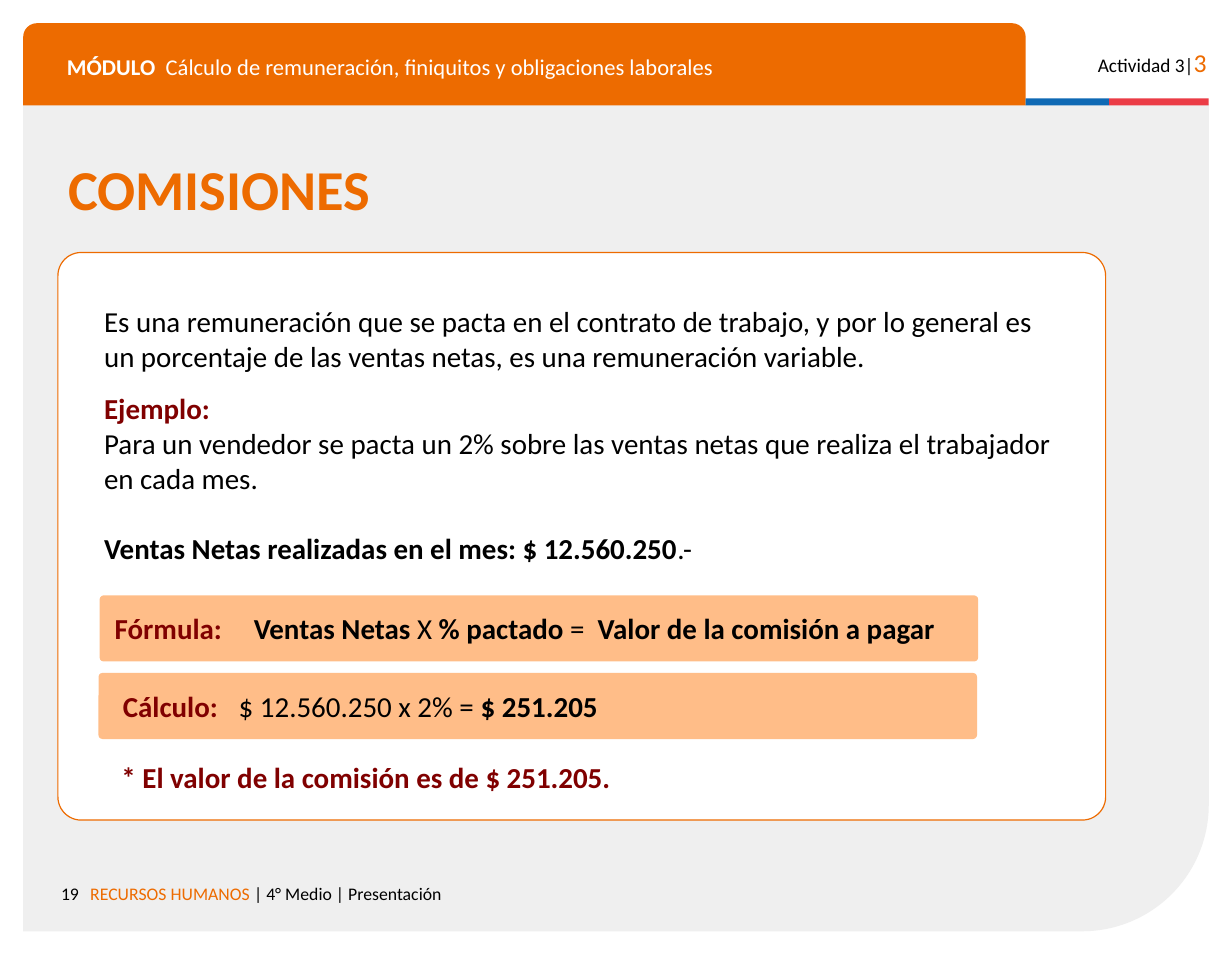
from lxml import etree
from pptx import Presentation
from pptx import util as u
from pptx.dml.color import RGBColor
from pptx.enum import shapes, text
from pptx.oxml.ns import qn

PX = 9144  # 100 px to the inch
FONT = "Calibri"
HEX = {"orange": "ED6B00", "blue": "0F69B4", "red": "EB3C46", "gray": "EFEFEF",
       "peach": "FFB375", "wine": "800000", "black": "000000", "white": "FFFFFF"}
KIND = shapes.MSO_SHAPE
RIGHT = text.PP_ALIGN.RIGHT


def px(*vals):
    return [v * PX for v in vals]


def tint(name):
    return RGBColor.from_string(HEX[name])


def block(page, kind, box, fill, adj=(), line=None):
    part = page.shapes.add_shape(kind, *px(*box))
    part.shadow.inherit = False
    part.fill.solid()
    part.fill.fore_color.rgb = tint(fill)
    for i, val in enumerate(adj):
        part.adjustments[i] = val
    if line:
        part.line.color.rgb = tint(line)
        part.line.width = u.Pt(0.75)
    else:
        part.line.fill.background()
    return part


def write(par, runs, size):
    """Each run is (words, colour, bold) with an optional own size."""
    for words, color, bold, *own in runs:
        run = par.add_run()
        run.text = words
        font = run.font
        font.name, font.bold = FONT, bold
        font.size = u.Pt(own[0] if own else size)
        font.color.rgb = tint(color)


def label(page, box, pars, size, pad=10, align=None):
    """Each paragraph is (space before in points, runs)."""
    frame = page.shapes.add_textbox(*px(*box)).text_frame
    frame.word_wrap = True
    frame.margin_left, frame.margin_right = px(10, 10)
    frame.margin_top, frame.margin_bottom = px(pad, pad)
    for i, (gap, runs) in enumerate(pars):
        par = frame.add_paragraph() if i else frame.paragraphs[0]
        par.alignment = align
        if gap:
            par.space_before = u.Pt(gap)
        write(par, runs, size)
    return frame


def band(page, box, pad, tab, runs):
    """A translucent bar whose text starts at pad and has one tab stop."""
    bar = block(page, KIND.ROUNDED_RECTANGLE, box, "peach", [0.06])
    clr = bar.fill._xPr.find(".//" + qn("a:srgbClr"))
    etree.SubElement(clr, qn("a:alpha"), val="86000")
    frame = bar.text_frame
    frame.word_wrap = True
    frame.vertical_anchor = text.MSO_ANCHOR.MIDDLE
    frame.margin_left, frame.margin_right = px(pad, 10)
    par = frame.paragraphs[0]
    par.alignment = text.PP_ALIGN.LEFT
    tabs = etree.SubElement(par._p.get_or_add_pPr(), qn("a:tabLst"))
    etree.SubElement(tabs, qn("a:tab"), pos=str(tab * PX), algn="l")
    write(par, runs, 18)


def header(page, x, y, w, h):
    main, blue = 865, 72
    block(page, KIND.ROUND_2_SAME_RECTANGLE, (x, y, main, h), "orange", [0.167, 0])
    # Two-colour strip
    left = x + main
    block(page, KIND.RECTANGLE, (left, y + h - 6, blue, 6), "blue")
    block(page, KIND.RECTANGLE, (left + blue, y + h - 6, w - main - blue, 6), "red")
    # Activity and module
    label(page, (x + 903, y + 10, 128, 38),
          [(0, [("Actividad 3|", "black", False), ("3", "orange", False, 16)])],
          12, align=RIGHT)
    frame = label(page, (x + 28, y + 18, 814, 35), [(0, [
        ("MÓDULO  ", "white", True),
        ("Cálculo de remuneración, finiquitos y obligaciones laborales",
         "white", False)])], 14)
    frame.paragraphs[0].line_spacing = 0.9


def panel(page, x, y, w, h):
    back = block(page, KIND.ROUND_1_RECTANGLE, (x, y, w, h), "gray", [0.153])
    back._element.spPr.xfrm.set("flipV", "1")


def footer(page, x, y):
    label(page, (x, y, 58, 29), [(0, [("19", "black", False)])], 11, align=RIGHT)
    label(page, (x + 48, y, 715, 38), [(0, [
        ("RECURSOS HUMANOS ", "orange", False),
        ("| 4° Medio | Presentación", "black", False)])], 11)


def card(page, x, y, w, h):
    block(page, KIND.ROUNDED_RECTANGLE, (x, y, w, h), "white", [0.041], "orange")
    # Definition and example
    label(page, (x + 30, y + 39, 847, 268), [
        (0, [("Es una remuneración que se pacta en el contrato de trabajo, y por "
              "lo general es un porcentaje de las ventas netas, es una "
              "remuneración variable.", "black", False)]),
        (11, [("Ejemplo:", "wine", True)]),
        (0, [("Para un vendedor se pacta un 2% sobre las ventas netas que realiza "
              "el trabajador en cada mes.", "black", False)]),
        (22, [("Ventas Netas realizadas en el mes: $ 12.560.250", "black", True),
              (".-", "black", False)])], 18, pad=5)
    # Formula and calculation
    band(page, (x + 36, y + 296, 758, 57), 12, 120, [
        ("Fórmula:\t", "wine", True), ("Ventas Netas ", "black", True),
        ("X ", "black", False), ("% pactado ", "black", True),
        ("=  ", "black", False), ("Valor de la comisión a pagar", "black", True)])
    band(page, (x + 35, y + 363, 758, 57), 20, 100, [
        ("Cálculo:\t", "wine", True), ("$ 12.560.250 x 2% = ", "black", False),
        ("$ 251.205", "black", True)])
    # Result
    label(page, (x + 45, y + 433, 713, 41),
          [(0, [("* El valor de la comisión es de $ 251.205.", "wine", True)])],
          18, pad=5)


def main():
    deck = Presentation()
    deck.slide_width, deck.slide_height = px(1063, 827)
    page = deck.slides.add_slide(deck.slide_layouts[6])
    panel(page, 20, 90, 1023, 714)
    header(page, 20, 20, 1023, 71)
    footer(page, 20, 753)
    label(page, (49, 128, 965, 69), [(0, [("COMISIONES", "orange", True)])], 35, pad=5)
    card(page, 50, 218, 904, 490)
    deck.save("out.pptx")


if __name__ == "__main__":
    main()
